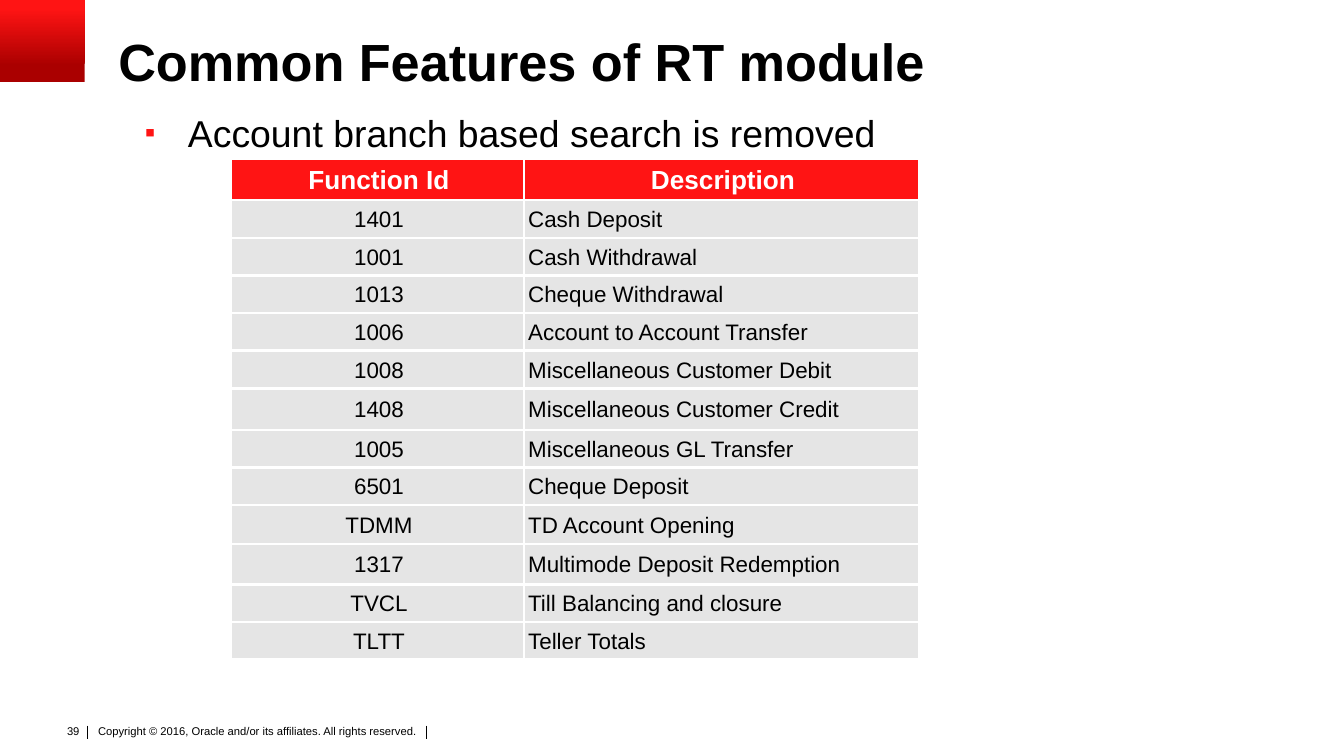
"""Build the slide on the common features of the RT module."""
from dataclasses import dataclass

from lxml.etree import SubElement
from pptx import Presentation
from pptx.dml.color import RGBColor as Rgb
from pptx.enum.shapes import MSO_CONNECTOR as Connector, MSO_SHAPE as Shape
from pptx.enum.text import MSO_ANCHOR as Anchor, MSO_AUTO_SIZE as AutoSize, PP_ALIGN as Align
from pptx.oxml.ns import qn
from pptx.util import Inches, Pt


@dataclass(frozen=True)
class Theme:
    font: str = "Arial"
    ink: str = "000000"
    paper: str = "FFFFFF"
    accent: str = "FF1414"
    accent_dark: str = "AA0000"
    row_fill: str = "E5E5E5"
    title_size: int = 28
    bullet_size: int = 20
    header_size: int = 14
    cell_size: int = 12
    footer_size: int = 6


class SlideBuilder:
    def __init__(self, slide, theme):
        self.slide = slide
        self.theme = theme

    def style(self, paragraph, size, color=None, bold=False, align=Align.LEFT):
        paragraph.alignment = align
        font = paragraph.font
        font.name, font.size, font.bold = self.theme.font, Pt(size), bold
        font.color.rgb = Rgb.from_string(color or self.theme.ink)

    def inset(self, frame, horizontal, vertical):
        frame.margin_left = frame.margin_right = Inches(horizontal)
        frame.margin_top = frame.margin_bottom = Inches(vertical)

    def title(self, text, box):
        title = self.slide.shapes.title
        title.left, title.top, title.width, title.height = map(Inches, box)
        frame = title.text_frame
        frame.text = text
        frame.auto_size = AutoSize.NONE
        frame.vertical_anchor = Anchor.MIDDLE
        self.inset(frame, 0, 0)
        paragraph = frame.paragraphs[0]
        paragraph.line_spacing = 0.9
        self.style(paragraph, self.theme.title_size, bold=True)

    def text(self, text, box, size, align=Align.LEFT, wrap=True, inset=(0.1, 0.05)):
        frame = self.slide.shapes.add_textbox(*map(Inches, box)).text_frame
        frame.text = text
        frame.word_wrap = wrap
        self.inset(frame, *inset)
        self.style(frame.paragraphs[0], size, align=align)
        return frame.paragraphs[0]

    def bullet(self, text, box, indent):
        paragraph = self.text(text, box, self.theme.bullet_size)
        properties = paragraph.font._element.getparent()
        properties.set("marL", str(Inches(indent)))
        properties.set("indent", str(-Inches(indent)))
        mark_color = properties.makeelement(qn("a:buClr"))
        SubElement(mark_color, qn("a:srgbClr"), val=self.theme.accent)
        mark_size = properties.makeelement(qn("a:buSzPct"), {"val": "80000"})
        mark_font = properties.makeelement(qn("a:buFont"), {"typeface": self.theme.font})
        mark = properties.makeelement(qn("a:buChar"), {"char": "▪"})
        for position, element in enumerate((mark_color, mark_size, mark_font, mark)):
            properties.insert(position, element)

    def corner_block(self, box):
        block = self.slide.shapes.add_shape(Shape.RECTANGLE, *map(Inches, box))
        block.shadow.inherit = False
        block.line.fill.background()
        block.fill.gradient()
        block.fill.gradient_angle = 90
        stops = ((0.2, self.theme.accent_dark), (0.9, self.theme.accent))
        for stop, (position, color) in zip(block.fill.gradient_stops, stops):
            stop.position = position
            stop.color.rgb = Rgb.from_string(color)

    def divider(self, x, top, bottom):
        ends = map(Inches, (x, top, x, bottom))
        divider = self.slide.shapes.add_connector(Connector.STRAIGHT, *ends)
        divider.line.color.rgb = Rgb.from_string(self.theme.ink)
        divider.line.width = Pt(0.5)
        SubElement(divider._element.spPr, qn("a:effectLst"))

    def borders(self, cell):
        properties = cell._tc.get_or_add_tcPr()
        for side in ("lnL", "lnR", "lnT", "lnB"):
            border = SubElement(properties, qn(f"a:{side}"), w=str(Pt(1.5)))
            fill = SubElement(border, qn("a:solidFill"))
            SubElement(fill, qn("a:srgbClr"), val=self.theme.paper)

    def cell(self, cell, text, fill, **text_style):
        cell.text = text
        cell.vertical_anchor = Anchor.MIDDLE
        cell.margin_left = Inches(0.03)
        cell.margin_right = cell.margin_top = Inches(0.01)
        cell.margin_bottom = 0
        self.borders(cell)
        cell.fill.solid()
        cell.fill.fore_color.rgb = Rgb.from_string(fill)
        self.style(cell.text_frame.paragraphs[0], **text_style)

    def table(self, left, top, widths, heights, header, records):
        theme = self.theme
        size = map(Inches, (left, top, sum(widths), sum(heights)))
        table = self.slide.shapes.add_table(len(heights), len(widths), *size).table
        for column, width in zip(table.columns, widths):
            column.width = Inches(width)
        for row, height in zip(table.rows, heights):
            row.height = Inches(height)
        for index, heading in enumerate(header):
            self.cell(table.cell(0, index), heading, theme.accent, size=theme.header_size,
                      color=theme.paper, bold=True, align=Align.CENTER)
        for row, record in enumerate(records, start=1):
            for index, (value, align) in enumerate(zip(record, (Align.CENTER, Align.LEFT))):
                self.cell(table.cell(row, index), value, theme.row_fill,
                          size=theme.cell_size, align=align)


FUNCTIONS = (
    ("1401", "Cash Deposit"),
    ("1001", "Cash Withdrawal"),
    ("1013", "Cheque Withdrawal"),
    ("1006", "Account to Account Transfer"),
    ("1008", "Miscellaneous Customer Debit"),
    ("1408", "Miscellaneous Customer Credit"),
    ("1005", "Miscellaneous GL Transfer"),
    ("6501", "Cheque Deposit"),
    ("TDMM", "TD Account Opening"),
    ("1317", "Multimode Deposit Redemption"),
    ("TVCL", "Till Balancing and closure"),
    ("TLTT", "Teller Totals"),
)
HEADER_HEIGHT = 0.31
ROW_HEIGHT = 0.28
TALL_ROWS = {"1408": 0.31, "TDMM": 0.29, "1317": 0.3}


def main():
    deck = Presentation()
    deck.slide_width = Inches(10)
    deck.slide_height = deck.slide_width * 9 // 16
    theme = Theme()
    builder = SlideBuilder(deck.slides.add_slide(deck.slide_layouts[5]), theme)

    builder.text("Copyright © 2016, Oracle and/or its affiliates. All rights reserved.",
                 (0.69, 5.37, 2.74, 0.24), theme.footer_size, inset=(0.04, 0.02))
    for x in (0.65, 3.17):
        builder.divider(x, 5.4, 5.5)
    builder.text("39", (0.39, 5.34, 0.3, 0.2), theme.footer_size, Align.RIGHT, wrap=False)
    builder.corner_block((0, 0, 0.63, 0.61))
    builder.title("Common Features of RT module", (0.88, 0.26, 9, 0.44))
    builder.bullet("Account branch based search is removed", (0.98, 0.77, 7.84, 0.44), 0.32)
    heights = [HEADER_HEIGHT] + [TALL_ROWS.get(code, ROW_HEIGHT) for code, _ in FUNCTIONS]
    builder.table(1.72, 1.18, (2.18, 2.94), heights,
                  ("Function Id", "Description"), FUNCTIONS)
    deck.save("out.pptx")


if __name__ == "__main__":
    main()
